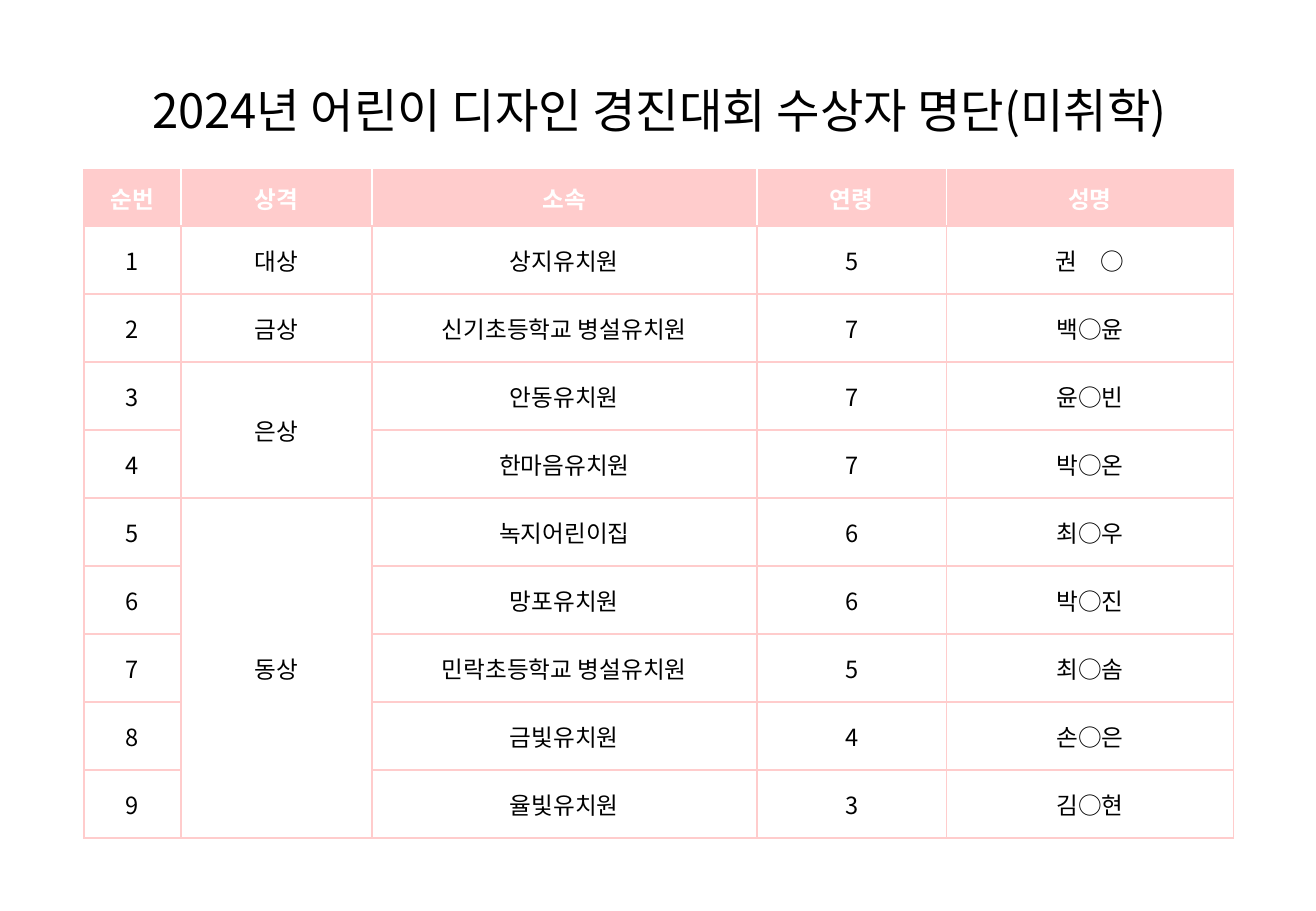
from pptx import Presentation
from pptx.dml.color import RGBColor
from pptx.enum.text import MSO_ANCHOR, MSO_AUTO_SIZE, PP_ALIGN
from pptx.oxml.ns import qn
from pptx.util import Inches, Pt
from lxml import etree

MID = MSO_ANCHOR.MIDDLE
GROW = MSO_AUTO_SIZE.SHAPE_TO_FIT_TEXT
CENTER = PP_ALIGN.CENTER
FONT = "Noto Sans CJK KR"
PINK, WHITE, BLACK = "FFCCCC", "FFFFFF", "000000"


def write(frame, text, size=14, color=BLACK, bold=False):
    para = frame.paragraphs[0]
    para.alignment = CENTER
    run = para.add_run()
    run.text = text
    font = run.font
    font.size, font.bold, font.name = Pt(size), bold, FONT
    font.color.rgb = RGBColor.from_string(color)
    etree.SubElement(font._element, qn("a:ea"), typeface=FONT)


def paint(cell, fill, left, right):
    props = cell._tc.get_or_add_tcPr()
    for side, color in zip("LRTB", (left, right, PINK, PINK)):
        line = etree.SubElement(props, qn(f"a:ln{side}"), w=str(Pt(1)))
        solid = etree.SubElement(line, qn("a:solidFill"))
        etree.SubElement(solid, qn("a:srgbClr"), val=color)
    cell.fill.solid()
    cell.fill.fore_color.rgb = RGBColor.from_string(fill)


deck = Presentation()
deck.slide_width, deck.slide_height = Inches(10.83), Inches(7.5)
slide = deck.slides.add_slide(deck.slide_layouts[6])

HEAD = ("순번", "상격", "소속", "연령", "성명")
PRIZES = {1: ("대상", 1), 2: ("금상", 1), 3: ("은상", 2), 5: ("동상", 5)}
KIDS = [
    ("상지유치원", "5", "권　○"),
    ("신기초등학교 병설유치원", "7", "백○윤"),
    ("안동유치원", "7", "윤○빈"),
    ("한마음유치원", "7", "박○온"),
    ("녹지어린이집", "6", "최○우"),
    ("망포유치원", "6", "박○진"),
    ("민락초등학교 병설유치원", "5", "최○솜"),
    ("금빛유치원", "4", "손○은"),
    ("율빛유치원", "3", "김○현"),
]
WIDTHS = (0.8, 1.57, 3.17, 1.56, 2.36)
TOP_ROW, ROW = 0.46, 0.56
LAST = len(HEAD) - 1

frame = slide.shapes.add_table(
    len(KIDS) + 1, len(HEAD), Inches(0.69), Inches(1.4),
    Inches(sum(WIDTHS)), Inches(TOP_ROW + ROW * len(KIDS)))
table = frame.table
for col, width in zip(table.columns, WIDTHS):
    col.width = Inches(width)
for n, row in enumerate(table.rows):
    row.height = Inches(ROW if n else TOP_ROW)

for c, label in enumerate(HEAD):
    cell = table.cell(0, c)
    cell.vertical_anchor = MID
    paint(cell, PINK, WHITE if c else PINK, WHITE if c < LAST else PINK)
    write(cell.text_frame, label, color=WHITE, bold=True)

for n, kid in enumerate(KIDS, 1):
    prize, span = PRIZES.get(n, ("", 1))
    for c, text in enumerate((str(n), prize, *kid)):
        cell = table.cell(n, c)
        cell.vertical_anchor = MID
        paint(cell, WHITE, PINK, PINK)
        if c > 1:
            cell.margin_left = cell.margin_right = cell.margin_top = Inches(0.01)
            cell.margin_bottom = 0
        if text:
            write(cell.text_frame, text)
    if span > 1:
        table.cell(n, 1).merge(table.cell(n + span - 1, 1))

title = slide.shapes.add_textbox(
    Inches(0.7), Inches(0.61), Inches(9.45), Inches(0.59)).text_frame
title.word_wrap = True
title.auto_size = GROW
title.vertical_anchor = MID
write(title, "2024년 어린이 디자인 경진대회 수상자 명단(미취학)", size=28)

deck.save("out.pptx")
